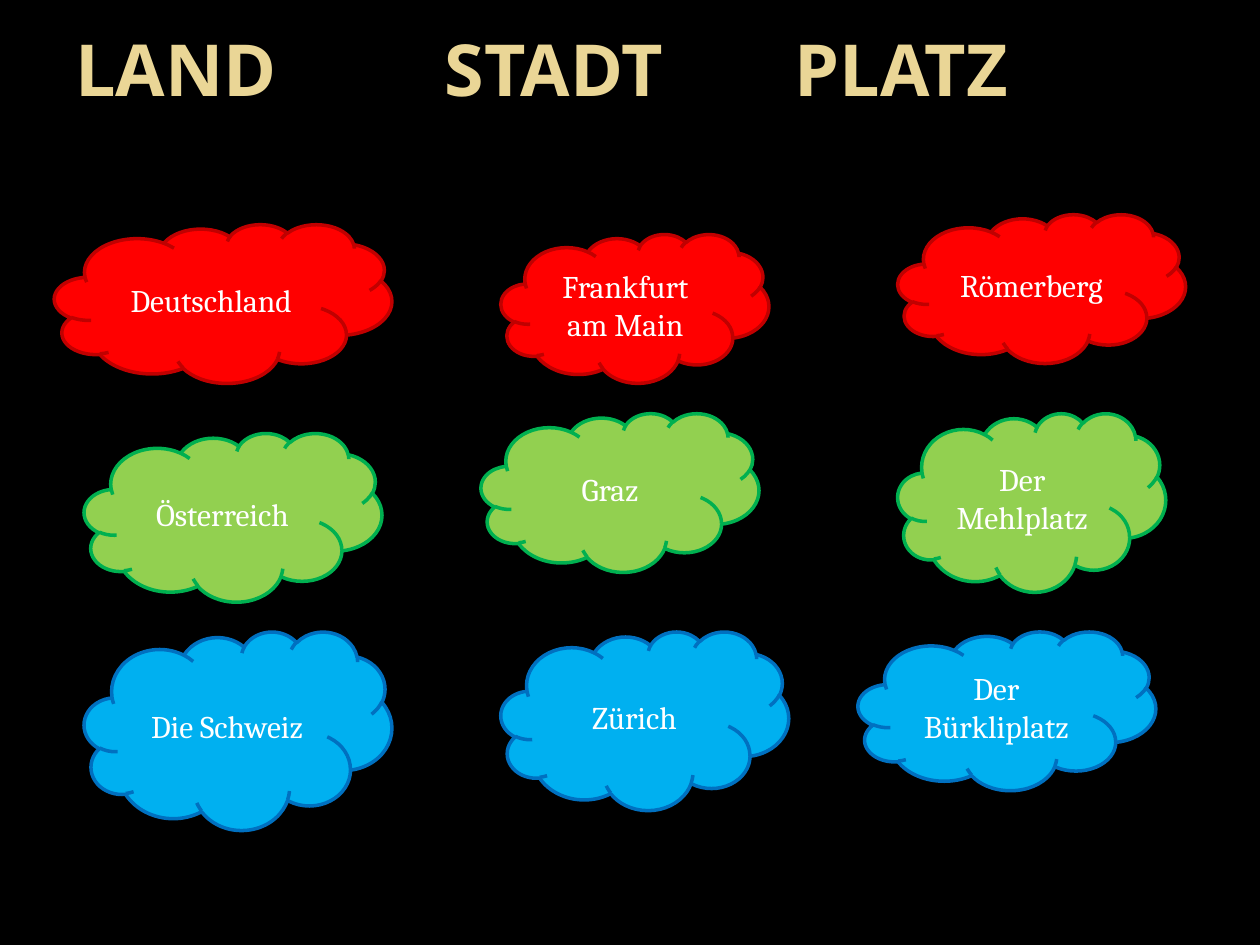
from dataclasses import dataclass

from lxml import etree
from pptx import Presentation
from pptx import util as u
from pptx.dml.color import RGBColor
from pptx.enum import shapes, text
from pptx.oxml.ns import qn


@dataclass
class Cloud:
    label: str
    left: float
    top: float
    width: float
    height: float


@dataclass
class Country:
    fill: str
    line: str
    clouds: list[Cloud]


COUNTRIES = [
    Country("FF0000", "C00000", [
        Cloud("Frankfurt am Main", 10.1, 4.72, 5.4, 3),
        Cloud("Deutschland", 1.1, 4.52, 6.8, 3.2),
        Cloud("Römerberg", 18.1, 4.32, 5.8, 3),
    ]),
    Country("92D050", "00B050", [
        Cloud("Graz", 9.7, 8.33, 5.6, 3.2),
        Cloud("Österreich", 1.7, 8.73, 6, 3.4),
        Cloud("Der Mehlplatz", 18.1, 8.33, 5.4, 3.6),
    ]),
    Country("00B0F0", "0070C0", [
        Cloud("Zürich", 10.1, 12.73, 5.8, 3.6),
        Cloud("Die Schweiz", 1.7, 12.73, 6.2, 4),
        Cloud("Der Bürkliplatz", 17.3, 12.73, 6, 3.2),
    ]),
]
HEADINGS = ["LAND", "STADT", "PLATZ"]
HEADING_STOPS = [7.45, 14.5]


def paint(color_format, color: str) -> None:
    color_format.rgb = RGBColor.from_string(color)


def set_font(para, name: str, size: float, color: str, bold: bool = False) -> None:
    font = para.font
    font.name, font.size, font.bold = name, u.Pt(size), bold
    font.fill.solid()
    paint(font.fill.fore_color, color)


def draw_headings(page) -> None:
    box = page.shapes.add_textbox(u.Cm(1.27), u.Cm(0.51), u.Cm(22.86), u.Cm(3.18))
    frame = box.text_frame
    frame.word_wrap = True
    frame.margin_top = 0
    frame.vertical_anchor = text.MSO_ANCHOR.TOP
    para = frame.paragraphs[0]
    para.text = "\t".join(HEADINGS)
    para.alignment = text.PP_ALIGN.LEFT
    tabs = etree.SubElement(para._p.get_or_add_pPr(), qn("a:tabLst"))
    for stop in HEADING_STOPS:
        etree.SubElement(tabs, qn("a:tab"), pos=str(u.Cm(stop)), algn="l")
    set_font(para, "Open Sans", 41, "EAD696", bold=True)


def draw_cloud(page, cloud: Cloud, fill: str, line: str) -> None:
    shape = page.shapes.add_shape(
        shapes.MSO_SHAPE.CLOUD,
        u.Cm(cloud.left), u.Cm(cloud.top), u.Cm(cloud.width), u.Cm(cloud.height),
    )
    shape.shadow.inherit = False
    shape.fill.solid()
    paint(shape.fill.fore_color, fill)
    paint(shape.line.color, line)
    shape.line.width = u.Pt(2)
    frame = shape.text_frame
    frame.word_wrap = True
    frame.vertical_anchor = text.MSO_ANCHOR.MIDDLE
    para = frame.paragraphs[0]
    para.text = cloud.label
    para.alignment = text.PP_ALIGN.CENTER
    set_font(para, "Cambria", 18, "FFFFFF")


def main() -> None:
    deck = Presentation()
    deck.slide_width, deck.slide_height = u.Cm(25.4), u.Cm(19.05)
    page = deck.slides.add_slide(deck.slide_layouts[6])
    page.background.fill.solid()
    paint(page.background.fill.fore_color, "000000")
    draw_headings(page)
    for country in COUNTRIES:
        for cloud in country.clouds:
            draw_cloud(page, cloud, country.fill, country.line)
    deck.save("out.pptx")


if __name__ == "__main__":
    main()
